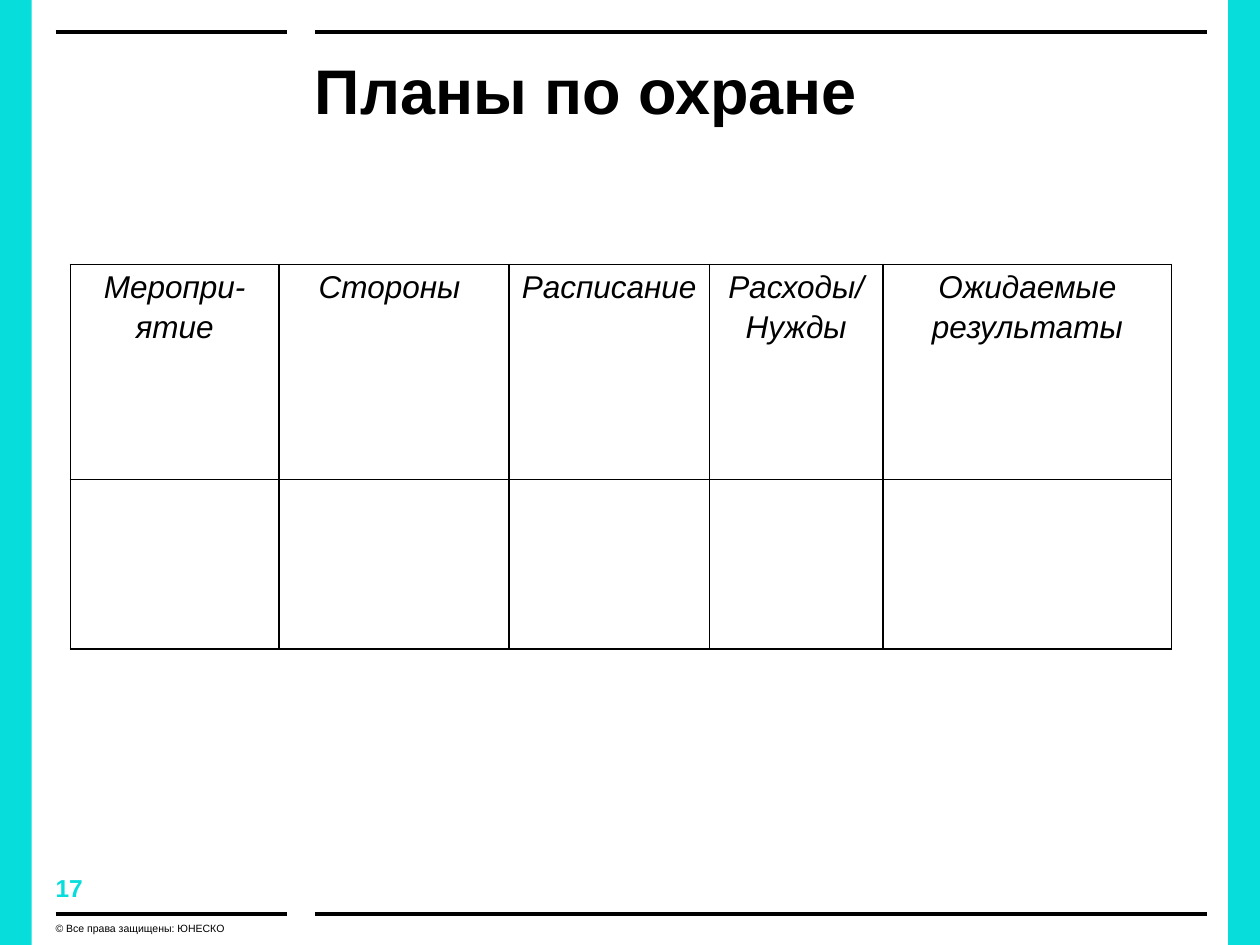
from dataclasses import dataclass

from lxml.etree import SubElement
from pptx import Presentation
from pptx.dml.color import RGBColor
from pptx.enum.shapes import MSO_CONNECTOR, MSO_SHAPE
from pptx.enum.text import PP_ALIGN
from pptx.oxml import parse_xml
from pptx.oxml.ns import nsdecls, qn
from pptx.util import Cm, Pt


@dataclass(frozen=True)
class Theme:
    font: str = "Arial"
    ink: RGBColor = RGBColor(0, 0, 0)
    accent: RGBColor = RGBColor(0x07, 0xDE, 0xDB)
    title_size: int = 36
    table_size: int = 18
    number_size: int = 14
    copyright_size: int = 6
    rule_width: float = 2
    border_width: float = 1


@dataclass(frozen=True)
class Box:
    """A region of the slide, in centimetres."""
    left: float
    top: float
    width: float
    height: float

    def lengths(self):
        return Cm(self.left), Cm(self.top), Cm(self.width), Cm(self.height)


THEME = Theme()
PAGE = Box(0, 0, 25.4, 19.05)
SIDE_COLUMN = Box(1.12, 0.64, 4.67, 17.78)
MAIN_COLUMN = Box(6.35, 0.64, 17.98, 17.78)
TABLE = Box(1.42, 5.33, 22.2, 7.75)
COLUMN_WIDTHS = (4.2, 4.64, 4.04, 3.5, 5.82)
ROW_HEIGHTS = (4.34, 3.41)
HEADINGS = ("Меропри-ятие", "Стороны ", "Расписание", "Расходы/ Нужды",
            "Ожидаемые результаты")


def add_span(para, text, size, color=THEME.ink, bold=False, italic=False):
    span = para.add_run()
    span.text = text
    font = span.font
    font.name, font.size = THEME.font, Pt(size)
    font.bold, font.italic = bold, italic
    font.color.rgb = color


def add_text(page, box, text, size, **style):
    frame = page.shapes.add_textbox(*box.lengths()).text_frame
    frame.word_wrap = True
    frame.margin_left = frame.margin_right = 0
    frame.margin_top = frame.margin_bottom = 0
    add_span(frame.paragraphs[0], text, size, **style)


def add_side_bands(page, box, width=0.64):
    for left in (box.left, box.left + box.width - width):
        band = page.shapes.add_shape(
            MSO_SHAPE.RECTANGLE, Cm(left), Cm(box.top), Cm(width), Cm(box.height))
        band.shadow.inherit = False
        band.fill.solid()
        band.fill.fore_color.rgb = THEME.accent
        band.line.fill.background()


def add_column_rules(page, box):
    """Draw a rule along the top and the bottom of a column."""
    for top in (box.top, box.top + box.height):
        rule = page.shapes.add_connector(
            MSO_CONNECTOR.STRAIGHT,
            Cm(box.left), Cm(top), Cm(box.left + box.width), Cm(top))
        rule.line.color.rgb = THEME.ink
        rule.line.width = Pt(THEME.rule_width)
        SubElement(rule._element.spPr, qn("a:effectLst"))


def add_title(page, box):
    title = Box(box.left, box.top + 0.4, box.width, 3.07)
    add_text(page, title, "Планы по охране", THEME.title_size, bold=True)


def add_footer(page, box):
    bottom = box.top + box.height
    add_text(page, Box(box.left, bottom - 0.82, 2.9, 0.61), "17",
             THEME.number_size, color=THEME.accent, bold=True)
    add_text(page, Box(box.left, bottom + 0.17, box.width, 0.46),
             "© Все права защищены: ЮНЕСКО", THEME.copyright_size)


def set_borders(cell):
    properties = cell._tc.get_or_add_tcPr()
    for position, side in enumerate(("lnL", "lnR", "lnT", "lnB")):
        properties.insert(position, parse_xml(
            f'<a:{side} {nsdecls("a")} w="{Pt(THEME.border_width)}"><a:solidFill>'
            f'<a:srgbClr val="{THEME.ink}"/></a:solidFill></a:{side}>'))


def add_plan_table(page, box):
    table = page.shapes.add_table(
        len(ROW_HEIGHTS), len(COLUMN_WIDTHS), *box.lengths()).table
    table.first_row = table.horz_banding = False
    for column, width in zip(table.columns, COLUMN_WIDTHS):
        column.width = Cm(width)
    for row, height in zip(table.rows, ROW_HEIGHTS):
        row.height = Cm(height)
    for cell in table.iter_cells():
        cell.margin_left = cell.margin_right = Cm(0.18)
        cell.margin_top = cell.margin_bottom = 0
        cell.fill.background()
        set_borders(cell)
    for cell, heading in zip(table.rows[0].cells, HEADINGS):
        para = cell.text_frame.paragraphs[0]
        para.alignment = PP_ALIGN.CENTER
        para.line_spacing = 1.15
        para.space_after = Pt(6)
        add_span(para, heading, THEME.table_size, italic=True)


def main():
    deck = Presentation()
    deck.slide_width, deck.slide_height = Cm(PAGE.width), Cm(PAGE.height)
    page = deck.slides.add_slide(deck.slide_layouts[6])
    add_side_bands(page, PAGE)
    for column in (SIDE_COLUMN, MAIN_COLUMN):
        add_column_rules(page, column)
    add_title(page, MAIN_COLUMN)
    add_footer(page, SIDE_COLUMN)
    add_plan_table(page, TABLE)
    deck.save("out.pptx")


if __name__ == "__main__":
    main()
